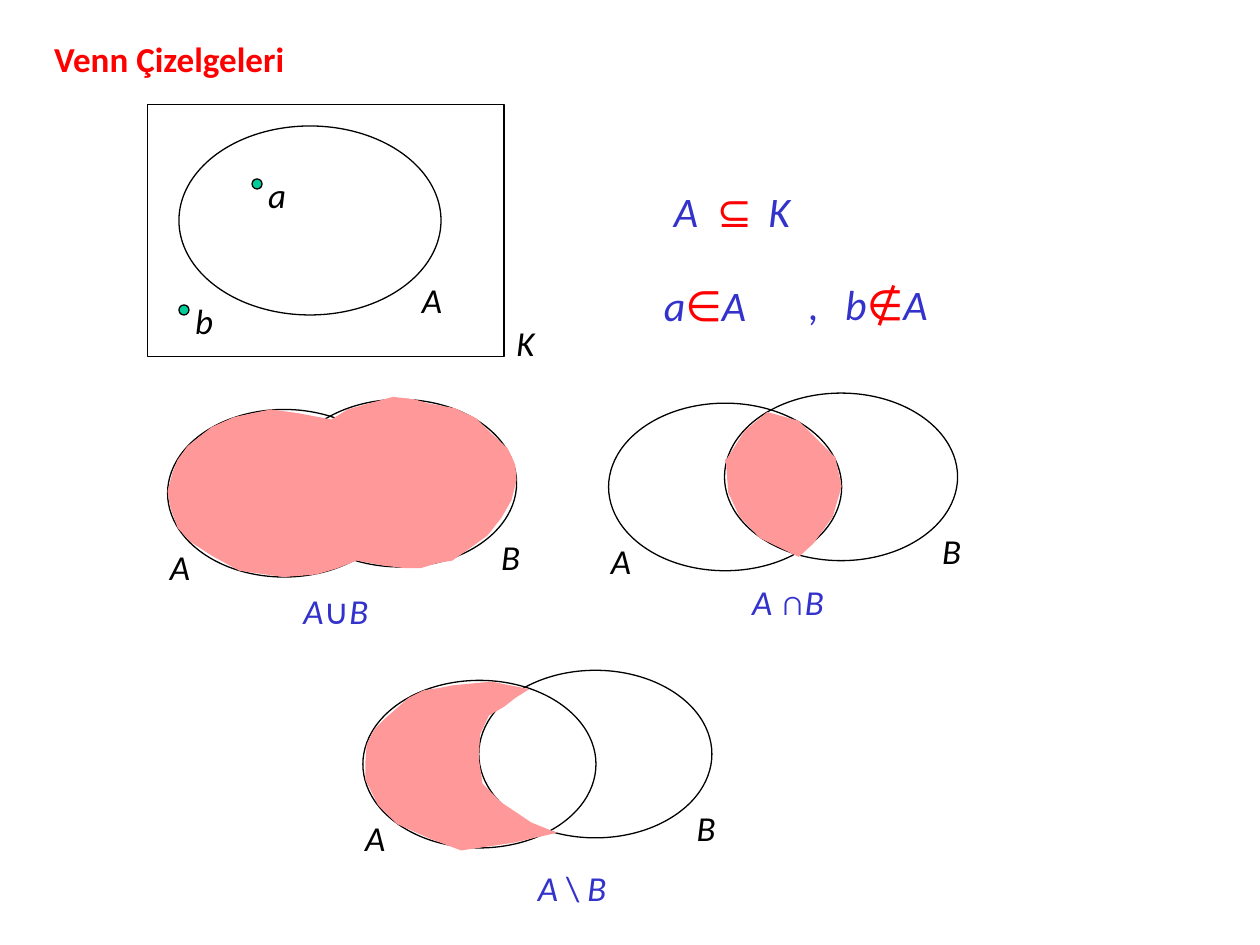
import pptx
import pptx.util
import pptx.dml.color
import pptx.enum.shapes
import pptx.enum.text
from lxml import etree

Inches = pptx.util.Inches
Shape = pptx.enum.shapes.MSO_SHAPE
Text = pptx.enum.text

BLACK, BLUE, RED = "000000", "3333CC", "FF0000"
PINK, GREEN = "FF9999", "00CC99"


def color(code):
    return pptx.dml.color.RGBColor.from_string(code)


class Board:
    """Style and current slide."""
    face = "Calibri"
    line = 0.75
    oval = (1.85, 1.33)

    def __init__(self, slide):
        self.slide = slide

    def place(self, item, box):
        names = ("left", "top", "width", "height")
        for name, size in zip(names, box):
            setattr(item, name, Inches(size))

    def letter(self, frame, runs, size, tabs=()):
        form = {"word_wrap": True, "auto_size": Text.MSO_AUTO_SIZE.NONE,
                "vertical_anchor": Text.MSO_ANCHOR.TOP,
                "margin_left": Inches(0.1), "margin_right": Inches(0.1),
                "margin_top": Inches(0.05), "margin_bottom": Inches(0.05)}
        for name, value in form.items():
            setattr(frame, name, value)
        para = frame.paragraphs[0]
        para.alignment = Text.PP_ALIGN.LEFT
        for text, code, style in runs:
            run = para.add_run()
            run.text = text
            font = {"name": self.face, "size": pptx.util.Pt(size),
                    "bold": style == "bold", "italic": style == "italic"}
            for name, value in font.items():
                setattr(run.font, name, value)
            run.font.color.rgb = color(code)
        if tabs:
            space = "{http://schemas.openxmlformats.org/drawingml/2006/main}"
            stops = etree.SubElement(para._p.get_or_add_pPr(), space + "tabLst")
            for stop in tabs:
                etree.SubElement(stops, space + "tab",
                                 pos=str(Inches(stop)), algn="l")

    def title(self, text, box):
        item = self.slide.shapes.title
        self.place(item, box)
        self.letter(item.text_frame, [(text, RED, "bold")], 20)

    def text(self, runs, box, size=20, tabs=()):
        item = self.slide.shapes.add_textbox(*map(Inches, box))
        self.letter(item.text_frame, runs, size, tabs)

    def label(self, name, x, y, wide=0.42):
        self.text([(name, BLACK, "italic")], (x, y, wide, 0.43))

    def formula(self, left, sign, right, box, size=20, mark=BLUE, tabs=()):
        runs = [(left, BLUE, "italic"), (sign, mark, ""),
                (right, BLUE, "italic")]
        self.text(runs, box, size, tabs)

    def shape(self, kind, box, fill=None):
        item = self.slide.shapes.add_shape(kind, *map(Inches, box))
        item.shadow.inherit = False
        if fill:
            item.fill.solid()
            item.fill.fore_color.rgb = color(fill)
        else:
            item.fill.background()
        item.line.color.rgb = color(BLACK)
        item.line.width = pptx.util.Pt(self.line)

    def dot(self, name, x, y):
        self.shape(Shape.OVAL, (x, y, 0.08, 0.08), GREEN)
        self.label(name, x + 0.03, y - 0.09)

    def pair(self, x, y):
        self.shape(Shape.OVAL, (x, y, *self.oval))
        self.label("A", x - 0.08, y + 1.03, 0.37)
        self.shape(Shape.OVAL, (x + 0.92, y - 0.08, *self.oval))
        self.label("B", x + 2.55, y + 0.95, 0.37)

    def area(self, points):
        spots = [(Inches(x), Inches(y)) for x, y in points]
        form = self.slide.shapes.build_freeform(*spots[0])
        form.add_line_segments(spots[1:], close=True)
        item = form.convert_to_shape()
        item.shadow.inherit = False
        item.fill.solid()
        item.fill.fore_color.rgb = color(PINK)
        item.line.fill.background()


UNION = [
    (1.41, 3.65), (1.49, 3.54), (1.68, 3.39), (1.86, 3.31), (2.15, 3.25),
    (2.37, 3.28), (2.63, 3.33), (2.76, 3.25), (2.9, 3.21), (3.12, 3.15),
    (3.29, 3.17), (3.39, 3.2), (3.61, 3.24), (3.78, 3.32), (3.91, 3.45),
    (4.03, 3.56), (4.09, 3.69), (4.1, 3.81), (4.06, 3.97), (3.98, 4.11),
    (3.87, 4.25), (3.76, 4.33), (3.59, 4.45), (3.47, 4.47), (3.34, 4.51),
    (3.22, 4.51), (3.05, 4.49), (2.83, 4.45), (2.68, 4.51), (2.51, 4.56),
    (2.25, 4.58), (1.9, 4.53), (1.68, 4.41), (1.51, 4.3), (1.41, 4.19),
    (1.35, 4.02), (1.33, 3.9), (1.37, 3.75)]
COMMON = [
    (5.75, 3.67), (5.91, 3.42), (6.09, 3.27), (6.34, 3.34), (6.63, 3.63),
    (6.68, 3.86), (6.61, 4.1), (6.46, 4.31), (6.34, 4.42), (6.03, 4.27),
    (5.87, 4.1), (5.78, 3.91), (5.76, 3.64)]
MINUS = [
    (2.9, 6.19), (2.9, 6.05), (2.91, 5.91), (2.97, 5.79), (3.06, 5.7),
    (3.14, 5.63), (3.24, 5.54), (3.36, 5.48), (3.49, 5.46), (3.59, 5.44),
    (3.9, 5.41), (4.2, 5.47), (4.09, 5.54), (4, 5.61), (3.88, 5.68),
    (3.81, 5.83), (3.8, 6.02), (3.83, 6.22), (3.98, 6.37), (4.22, 6.53),
    (4.42, 6.61), (4.07, 6.69), (3.66, 6.75), (3.42, 6.66), (3.15, 6.54),
    (3, 6.39), (2.95, 6.29)]


def main():
    deck = pptx.Presentation()
    deck.slide_width, deck.slide_height = Inches(10), Inches(7.5)
    board = Board(deck.slides.add_slide(deck.slide_layouts[5]))
    board.title("Venn Çizelgeleri", (0.33, 0.25, 2.83, 0.43))

    # Set A inside K, with one point in and one point out
    board.shape(Shape.OVAL, (1.42, 1, 2.08, 1.5))
    board.label("A", 3.25, 2.16)
    board.shape(Shape.RECTANGLE, (1.17, 0.83, 2.83, 2))
    board.label("K", 4, 2.5)
    board.dot("a", 2, 1.42)
    board.dot("b", 1.42, 2.42)

    # Relations
    board.formula("A\t", "⊆\t", "K", (5.25, 1.42, 1.25, 0.5), 24, RED,
                  (0.34, 0.75))
    board.formula("a", "∈", "A", (5.17, 2.17, 1.05, 0.5), 24, RED)
    board.formula(",\tb", "∉", "A", (6.32, 2.16, 1.4, 0.5), 24, RED, (0.29,))

    # Union, intersection and difference
    for spot, points, parts, box in (
            ((1.33, 3.25), UNION, ("A", "∪", "B"), (2.31, 4.63, 0.92, 0.43)),
            ((4.83, 3.2), COMMON, ("A ", "∩", "B"), (5.87, 4.56, 0.92, 0.43)),
            ((2.88, 5.4), MINUS, ("A ", "\\ ", "B"), (4.17, 6.83, 0.83, 0.43))):
        board.pair(*spot)
        board.area(points)
        board.formula(*parts, box)

    deck.save("out.pptx")


if __name__ == "__main__":
    main()
